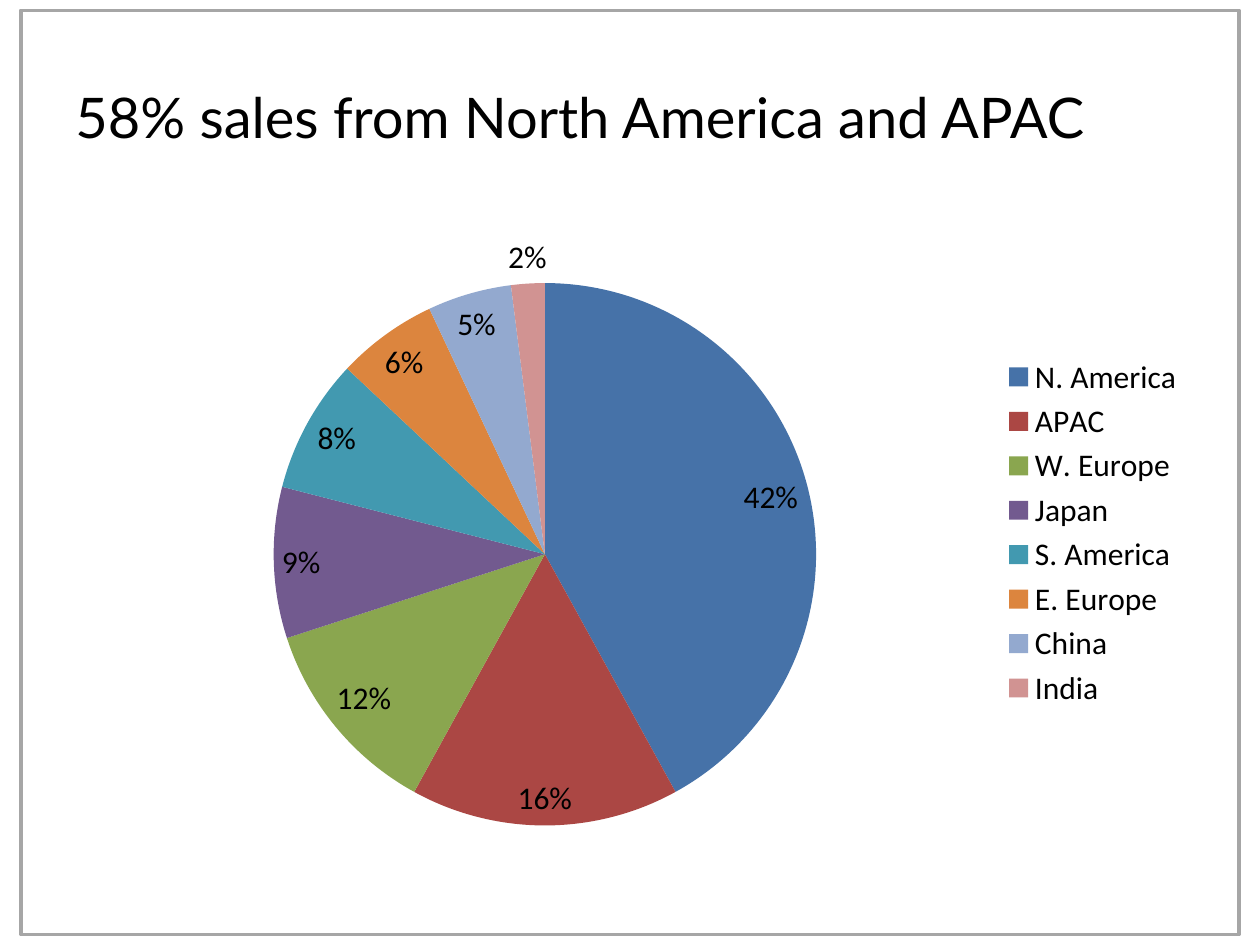
import pptx
import pptx.chart.data
import pptx.dml.color
import pptx.enum.chart
import pptx.enum.shapes
import pptx.enum.text
import pptx.oxml
import pptx.util
from pptx.util import Cm, Pt

COLORS = {
    "frame": "A6A6A6",
    "text": "000000",
}

# Region: (share of sales, slice colour)
SALES = {
    "N. America": (0.42, "4672A8"),
    "APAC": (0.16, "AB4744"),
    "W. Europe": (0.12, "8AA64F"),
    "Japan": (0.09, "725A8F"),
    "S. America": (0.08, "4299B0"),
    "E. Europe": (0.06, "DC853E"),
    "China": (0.05, "93A9CF"),
    "India": (0.02, "D19392"),
}

# Pie area as fractions of the chart frame
PIE_AREA = {"x": 0.185, "y": 0.1, "w": 0.48, "h": 0.87}


def rgb(value):
    return pptx.dml.color.RGBColor.from_string(value)


def style_font(font, name, size):
    font.name = name
    font.size = Pt(size)
    font.color.rgb = rgb(COLORS["text"])


def add_frame(s):
    sp = s.shapes.add_shape(pptx.enum.shapes.MSO_SHAPE.RECTANGLE,
                            Cm(0.42), Cm(0.21), Cm(24.56), Cm(18.63))
    sp.shadow.inherit = False
    sp.fill.background()
    sp.line.color.rgb = rgb(COLORS["frame"])
    sp.line.width = Pt(2)


def add_title(s, text):
    sp = s.shapes.add_textbox(Cm(1.27), Cm(0.76), Cm(22.86), Cm(3.18))
    tf = sp.text_frame
    tf.word_wrap = True
    tf.vertical_anchor = pptx.enum.text.MSO_ANCHOR.MIDDLE
    tf.text = text
    style_font(tf.paragraphs[0].runs[0].font, "Lato", 32)


def set_plot_layout(chart, area):
    plot_area = chart._chartSpace.chart.plotArea
    for old in plot_area.xpath("c:layout"):
        plot_area.remove(old)
    modes = "".join(f'<c:{k}Mode val="edge"/>' for k in "xy")
    sizes = "".join(f'<c:{k} val="{v}"/>' for k, v in area.items())
    plot_area.insert(0, pptx.oxml.parse_xml(
        '<c:layout xmlns:c="http://schemas.openxmlformats.org/drawingml/2006/chart">'
        f'<c:manualLayout><c:layoutTarget val="inner"/>{modes}{sizes}'
        '</c:manualLayout></c:layout>'))


def add_sales_pie(s):
    data = pptx.chart.data.CategoryChartData(number_format="0%")
    data.categories = list(SALES)
    data.add_series("Series 1", [share for share, _ in SALES.values()])
    chart = s.shapes.add_chart(pptx.enum.chart.XL_CHART_TYPE.PIE,
                               Cm(1.27), Cm(4.45), Cm(22.86), Cm(12.57), data).chart
    chart.has_title = False
    style_font(chart.font, "Calibri", 18)
    set_plot_layout(chart, PIE_AREA)

    # Legend
    chart.has_legend = True
    chart.legend.position = pptx.enum.chart.XL_LEGEND_POSITION.RIGHT
    chart.legend.include_in_layout = False

    # Slices
    plot = chart.plots[0]
    plot.vary_by_categories = True
    for i, (_, color) in enumerate(SALES.values()):
        fill = plot.series[0].points[i].format.fill
        fill.solid()
        fill.fore_color.rgb = rgb(color)

    # Percentages
    plot.has_data_labels = True
    labels = plot.data_labels
    labels.show_value = True
    labels.number_format = "0%"
    labels.number_format_is_linked = False
    labels.position = pptx.enum.chart.XL_LABEL_POSITION.BEST_FIT
    style_font(labels.font, "Calibri", 18)


def main():
    prs = pptx.Presentation()
    prs.slide_width, prs.slide_height = Cm(25.4), Cm(19.05)
    s = prs.slides.add_slide(prs.slide_layouts[6])
    add_frame(s)
    add_title(s, "58% sales from North America and APAC")
    add_sales_pie(s)
    prs.save("out.pptx")


if __name__ == "__main__":
    main()
